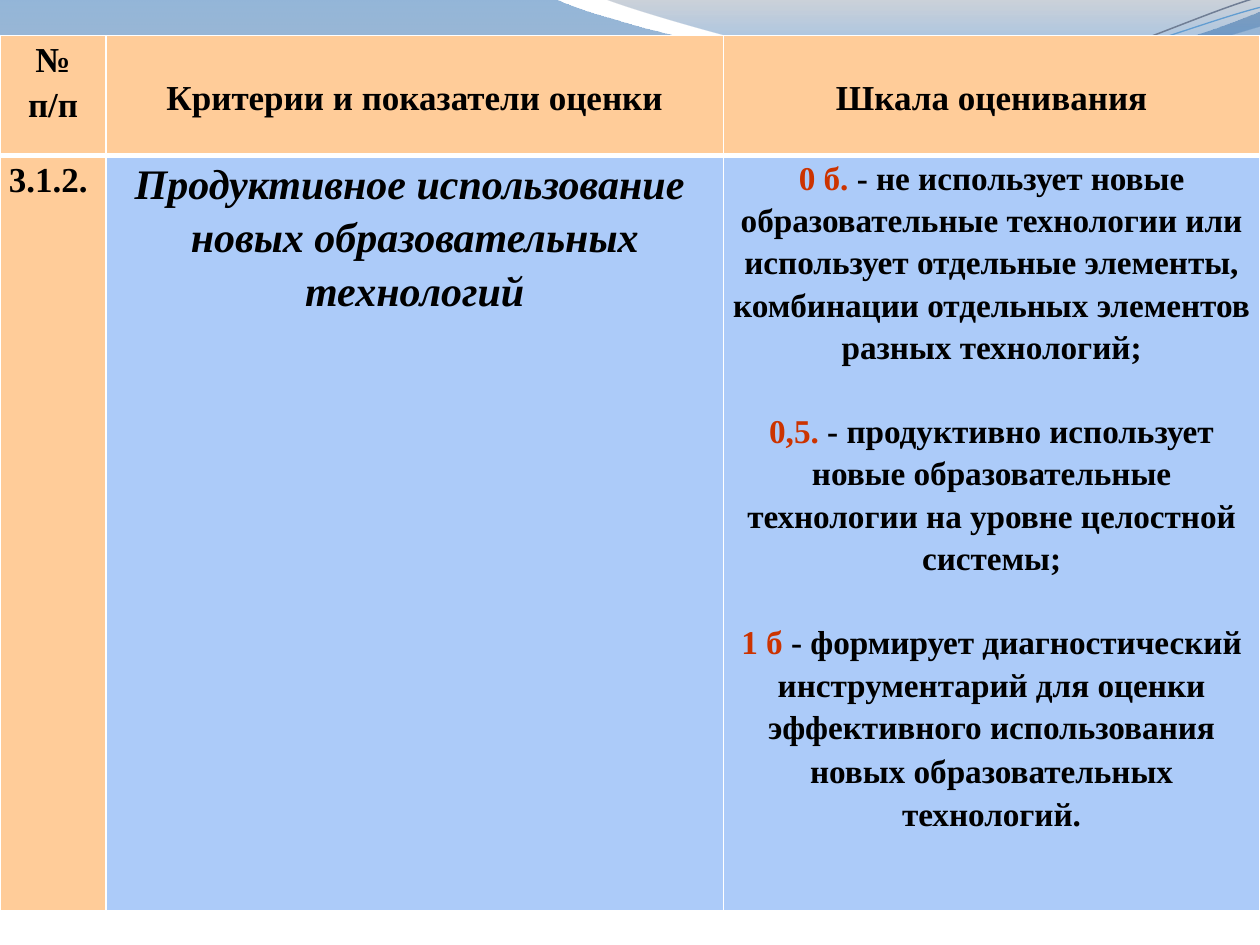
from lxml import etree
from pptx import Presentation
from pptx.dml.color import RGBColor
from pptx.enum.text import MSO_ANCHOR, PP_ALIGN
from pptx.oxml import parse_xml
from pptx.oxml.ns import nsdecls, qn
from pptx.util import Cm, Pt

LEFT, CENTER = PP_ALIGN.LEFT, PP_ALIGN.CENTER
TOP, MIDDLE = MSO_ANCHOR.TOP, MSO_ANCHOR.MIDDLE
FONT = "Times New Roman"
BLACK, RED, WHITE = "000000", "CC3300", "FFFFFF"
PEACH, BLUE = "FFCC99", "ACCBF9"

# Table content: a paragraph is a list of (text, size, colour, italic)
COLUMNS = [2.14, 12.44, 10.82]
ROWS = [2.41, 15.23]
TABLE_TOP = 0.72


def heading(text):
    return [(text, 20, BLACK, False)]


def score(mark, *details):
    return [(mark, 19, RED, False)] + [(text, size, BLACK, False) for text, size in details]


# Each cell: fill, alignment, anchor, paragraphs
CELLS = [
    [
        (PEACH, CENTER, TOP, [heading("№"), heading("п/п")]),
        (PEACH, CENTER, MIDDLE, [heading("Критерии и показатели оценки")]),
        (PEACH, CENTER, MIDDLE, [heading("Шкала оценивания")]),
    ],
    [
        (PEACH, LEFT, TOP, [heading("3.1.2.")]),
        (BLUE, CENTER, TOP, [
            [("Продуктивное использование  новых образовательных технологий", 24, BLACK, True)],
        ]),
        (BLUE, CENTER, TOP, [
            score("0 б.", (" - не использует новые образовательные технологии или использует "
                           "отдельные элементы, комбинации отдельных элементов разных "
                           "технологий;", 19)),
            score("0,5.", (" - продуктивно использует новые образовательные технологии "
                           "на уровне целостной системы;", 19)),
            score("1 б ", ("- формирует диагностический инструментарий для оценки "
                           "эффективного использования новых образовательных", 19),
                  (" ", 20), ("технологий.", 19)),
        ]),
    ],
]
PARAGRAPH_GAPS = {(1, 2): 24}

# Waves: start point, then steps of one point (line) or three points (Bézier curve)
FILLED_WAVES = [
    ((0, -0.03), [
        [(11.18, -0.03)],
        [(12.09, 0.43), (16.87, 1.6), (19.25, 1.6)],
        [(21.67, 1.6), (24.33, 0.66), (25.4, 0.23)],
        [(25.43, 0.91)],
        [(24.97, 1.12), (22.1, 1.93), (18.95, 1.91)],
        [(15.8, 1.91), (9.7, 0.71), (6.53, 0.86)],
        [(3.28, 0.89), (1.17, 2.11), (-0.03, 2.87)],
        [(0, -0.03)],
    ], [(0, "125EAA", 45), (100, "697FA4", 55)]),
    ((12.17, -0.03), [
        [(12.93, 0.28), (17.32, 1.57), (19.53, 1.65)],
        [(21.74, 1.75), (24.41, 0.81), (25.4, 0.53)],
        [(25.4, 0)],
        [(12.17, -0.03)],
    ], [(0, "596982", 30), (80, "0670DA", 45)]),
]
LINE_WAVES = [
    ((0, 2.82), [
        [(1.22, 2.36), (4.01, 1.45), (7.04, 1.32)],
        [(10.03, 1.19), (15.06, 2.26), (18.11, 2.03)],
        [(21.16, 1.8), (23.83, 0.38), (25.35, -0.05)],
    ], "707E95", 0.85),
    ((0, 2.64), [
        [(1.19, 2.44), (4.17, 1.55), (7.19, 1.42)],
        [(10.24, 1.3), (15.16, 2.11), (18.21, 1.91)],
        [(21.23, 1.71), (23.9, 0.53), (25.4, 0.15)],
    ], "629DD1", 0.75),
]


def color(value):
    return RGBColor.from_string(value)


def add_wave(page, start, steps, close):
    builder = page.shapes.build_freeform(Cm(start[0]), Cm(start[1]))
    points = [(Cm(x), Cm(y)) for step in steps for x, y in step]
    builder.add_line_segments(points, close=close)
    wave = builder.convert_to_shape()
    wave.shadow.inherit = False
    # Turn each group of three segments into one curve
    segments = iter(list(wave._element.iter(qn("a:lnTo"))))
    for step in steps:
        group = [next(segments) for _ in step]
        if len(group) == 3:
            curve = etree.Element(qn("a:cubicBezTo"))
            group[0].addprevious(curve)
            for segment in group:
                curve.append(segment[0])
                segment.getparent().remove(segment)
    return wave


def fill_gradient(shape, stops):
    shape.fill.background()
    marks = "".join(
        f'<a:gs pos="{place * 1000}"><a:srgbClr val="{value}">'
        f'<a:alpha val="{alpha * 1000}"/></a:srgbClr></a:gs>'
        for place, value, alpha in stops)
    gradient = parse_xml(f'<a:gradFill {nsdecls("a")}><a:gsLst>{marks}</a:gsLst>'
                         '<a:lin ang="5400000" scaled="0"/></a:gradFill>')
    properties = shape._element.spPr
    properties.replace(properties.find(qn("a:noFill")), gradient)


def set_borders(cell, widths):
    properties = cell._tc.get_or_add_tcPr()
    for index, (side, width) in enumerate(widths.items()):
        line = etree.Element(qn(f"a:ln{side}"), w=str(Pt(width)))
        fill = etree.SubElement(line, qn("a:solidFill"))
        etree.SubElement(fill, qn("a:srgbClr"), val=WHITE)
        properties.insert(index, line)


def fill_cell(cell, fill, alignment, anchor, paragraphs, gap):
    cell.fill.solid()
    cell.fill.fore_color.rgb = color(fill)
    cell.vertical_anchor = anchor
    cell.margin_left = cell.margin_right = Cm(0.18)
    cell.margin_top = cell.margin_bottom = 0
    for index, spans in enumerate(paragraphs):
        frame = cell.text_frame
        para = frame.add_paragraph() if index else frame.paragraphs[0]
        para.alignment = alignment
        para.line_spacing = 1.15
        if index and gap:
            para.space_before = Pt(gap)
        for text, size, ink, italic in spans:
            span = para.add_run()
            span.text = text
            font = span.font
            font.name, font.size, font.bold, font.italic = FONT, Pt(size), True, italic
            font.color.rgb = color(ink)


deck = Presentation()
deck.slide_width, deck.slide_height = Cm(25.4), Cm(19.05)
page = deck.slides.add_slide(deck.slide_layouts[6])

# Waves along the top edge
for start, steps, stops in FILLED_WAVES:
    wave = add_wave(page, start, steps, True)
    fill_gradient(wave, stops)
    wave.line.fill.background()
for start, steps, ink, width in LINE_WAVES:
    wave = add_wave(page, start, steps, False)
    wave.fill.background()
    wave.line.color.rgb = color(ink)
    wave.line.width = Pt(width)

# Criteria table
table = page.shapes.add_table(len(ROWS), len(COLUMNS), 0, Cm(TABLE_TOP),
                              Cm(sum(COLUMNS)), Cm(sum(ROWS))).table
for column, width in zip(table.columns, COLUMNS):
    column.width = Cm(width)
for row, height in zip(table.rows, ROWS):
    row.height = Cm(height)
for r, row in enumerate(CELLS):
    for c, content in enumerate(row):
        cell = table.cell(r, c)
        fill_cell(cell, *content, PARAGRAPH_GAPS.get((r, c)))
        set_borders(cell, {"L": 1, "R": 1, "T": 3 if r else 1, "B": 1 if r else 3})

deck.save("out.pptx")
